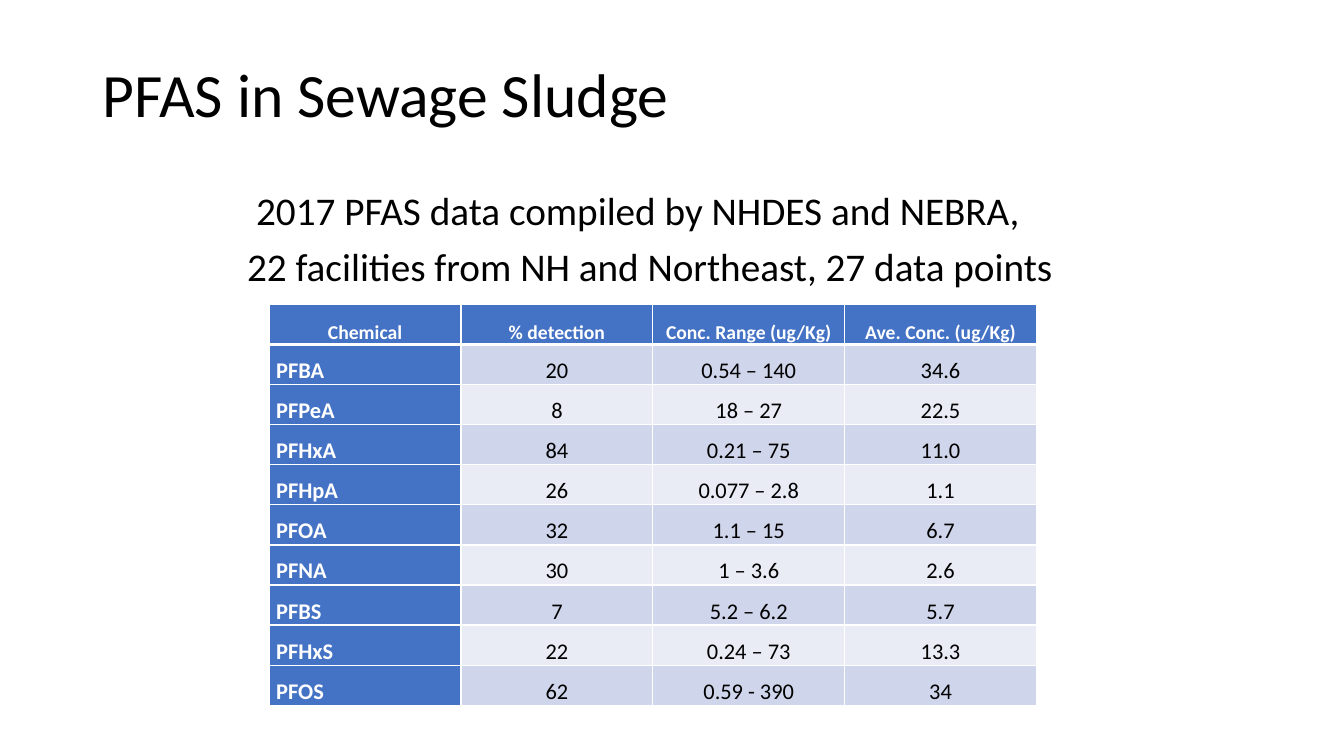
import pptx
import pptx.dml.color
import pptx.enum.text
import pptx.oxml
import pptx.util
from pptx.oxml.ns import nsdecls

BLACK = pptx.dml.color.RGBColor(0x00, 0x00, 0x00)
WHITE = pptx.dml.color.RGBColor(0xFF, 0xFF, 0xFF)
BLUE = pptx.dml.color.RGBColor(0x44, 0x72, 0xC4)
BAND_DARK = pptx.dml.color.RGBColor(0xCF, 0xD5, 0xEA)
BAND_LIGHT = pptx.dml.color.RGBColor(0xE9, 0xEB, 0xF5)
FONT = "Calibri"
ALIGN = pptx.enum.text.PP_ALIGN
ANCHOR = pptx.enum.text.MSO_ANCHOR

# Left, top, width and height in percent of the slide
TITLE_BOX = (6.88, 5.33, 86.25, 15.2)
BODY_BOX = (17.63, 24.67, 64.67, 70.13)
TABLE_BOX = (20.03, 40.27, 57.09, 53.07)

SOURCE_LINES = [
    # Text, left indent in inches
    ("2017 PFAS data compiled by NHDES and NEBRA,", 0.09),
    ("22 facilities from NH and Northeast, 27 data points", 0),
]
SLUDGE_DATA = [
    ("Chemical", "% detection", "Conc. Range (ug/Kg)", "Ave. Conc. (ug/Kg)"),
    ("PFBA", "20", "0.54 – 140", "34.6"),
    ("PFPeA", "8", "18 – 27", "22.5"),
    ("PFHxA", "84", "0.21 – 75", "11.0"),
    ("PFHpA", "26", "0.077 – 2.8", "1.1"),
    ("PFOA", "32", "1.1 – 15", "6.7"),
    ("PFNA", "30", "1 – 3.6", "2.6"),
    ("PFBS", "7", "5.2 – 6.2", "5.7"),
    ("PFHxS", "22", "0.24 – 73", "13.3"),
    ("PFOS", "62", "0.59 - 390", "34"),
]


def to_lengths(deck, box):
    """Turn a box in percent of the slide into slide lengths."""
    sides = (deck.slide_width, deck.slide_height) * 2
    return [int(side * share / 100) for side, share in zip(sides, box)]


def place(shape, lengths):
    shape.left, shape.top, shape.width, shape.height = lengths


def style_paragraph(para, size, color, spacing, align=ALIGN.LEFT, bold=False):
    para.alignment = align
    para.line_spacing = spacing
    para.font.name = FONT
    para.font.size = pptx.util.Pt(size)
    para.font.color.rgb = color
    para.font.bold = bold


def fill_title(title, lengths):
    place(title, lengths)
    frame = title.text_frame
    frame.text = "PFAS in Sewage Sludge"
    frame.auto_size = pptx.enum.text.MSO_AUTO_SIZE.NONE
    frame.vertical_anchor = ANCHOR.MIDDLE
    style_paragraph(frame.paragraphs[0], 44, BLACK, 0.9)


def fill_body(body, lengths):
    place(body, lengths)
    frame = body.text_frame
    frame.text = "\n".join(text for text, _ in SOURCE_LINES)
    frame.auto_size = pptx.enum.text.MSO_AUTO_SIZE.NONE
    for number, para in enumerate(frame.paragraphs):
        properties = para._p.get_or_add_pPr()
        properties.set("marL", str(pptx.util.Inches(SOURCE_LINES[number][1])))
        properties.set("indent", "0")
        properties.append(pptx.oxml.parse_xml(f"<a:buNone {nsdecls('a')}/>"))
        style_paragraph(para, 28, BLACK, 0.9)
        para.space_before = pptx.util.Pt(10 if number else 0)


def add_borders(cell, top, bottom):
    """Draw white cell borders; top and bottom widths are in points."""
    properties = cell._tc.get_or_add_tcPr()
    for side, width in (("L", 1), ("R", 1), ("T", top), ("B", bottom)):
        properties.append(pptx.oxml.parse_xml(
            f'<a:ln{side} {nsdecls("a")} w="{pptx.util.Pt(width)}">'
            f'<a:solidFill><a:srgbClr val="{WHITE}"/></a:solidFill></a:ln{side}>'))


def fill_cell(cell, text, row, column):
    heading = row == 0 or column == 0
    add_borders(cell, 3 if row == 1 else 1, 3 if row == 0 else 1)
    cell.fill.solid()
    cell.fill.fore_color.rgb = BLUE if heading else (BAND_LIGHT, BAND_DARK)[row % 2]
    cell.margin_left = cell.margin_right = pptx.util.Inches(0.07)
    cell.margin_top = cell.margin_bottom = 0
    cell.vertical_anchor = ANCHOR.BOTTOM
    cell.text = text
    style_paragraph(cell.text_frame.paragraphs[0], 16 if row else 14,
                    WHITE if heading else BLACK, 1.07,
                    ALIGN.LEFT if row and column == 0 else ALIGN.CENTER, heading)


def add_sludge_table(page, lengths):
    table = page.shapes.add_table(len(SLUDGE_DATA), len(SLUDGE_DATA[0]), *lengths).table
    table.first_col = True
    for row, texts in enumerate(SLUDGE_DATA):
        for column, text in enumerate(texts):
            fill_cell(table.cell(row, column), text, row, column)


def main():
    deck = pptx.Presentation()
    deck.slide_width = pptx.util.Inches(13.33)
    deck.slide_height = pptx.util.Inches(7.5)
    page = deck.slides.add_slide(deck.slide_layouts[1])
    fill_title(page.shapes.title, to_lengths(deck, TITLE_BOX))
    fill_body(page.placeholders[1], to_lengths(deck, BODY_BOX))
    add_sludge_table(page, to_lengths(deck, TABLE_BOX))
    deck.save("out.pptx")


if __name__ == "__main__":
    main()
